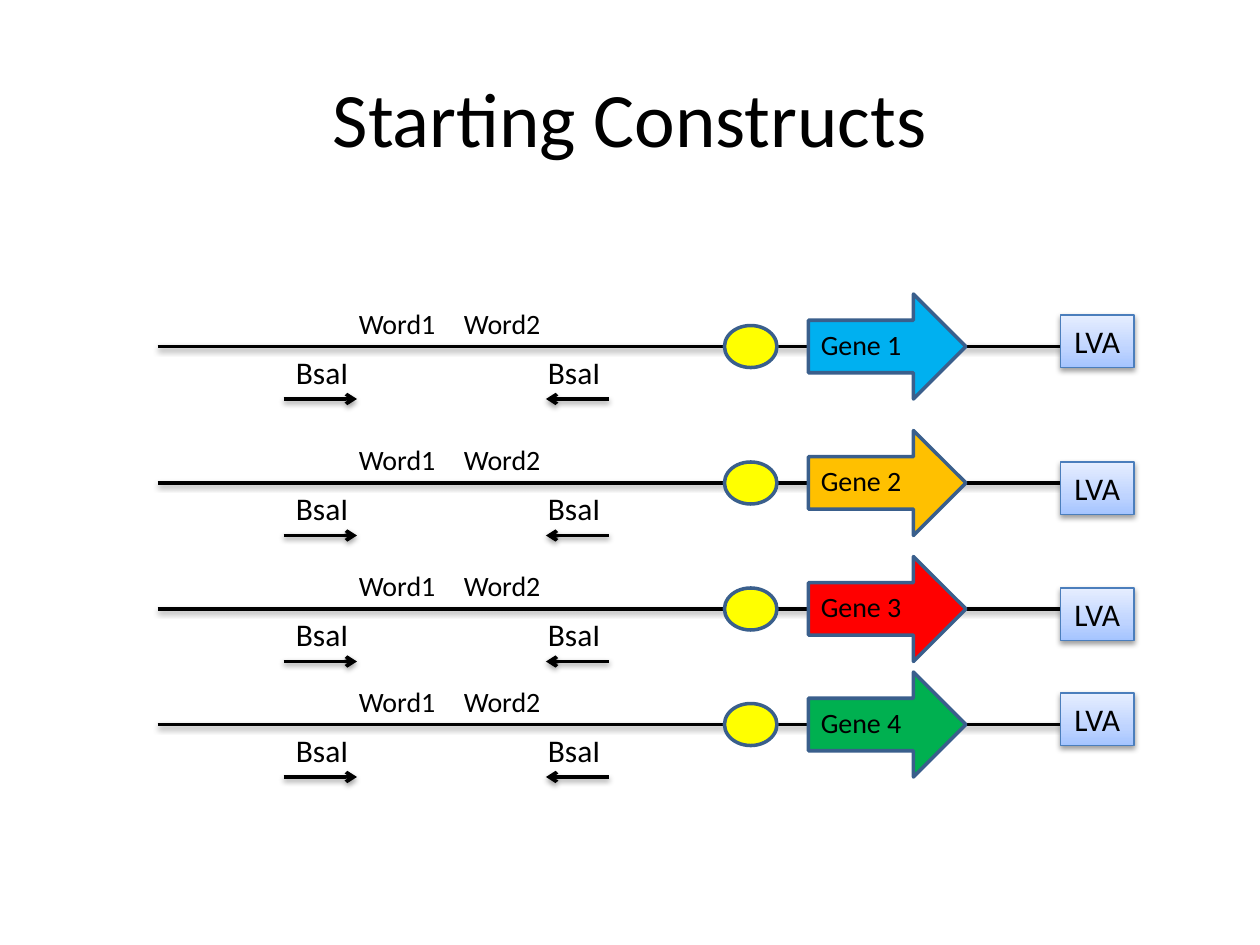
from copy import deepcopy
from dataclasses import dataclass

from lxml.etree import SubElement
from pptx import Presentation
from pptx.dml.color import RGBColor
from pptx.enum.shapes import MSO_CONNECTOR, MSO_SHAPE
from pptx.enum.text import MSO_ANCHOR, MSO_AUTO_SIZE, PP_ALIGN
from pptx.oxml.ns import qn
from pptx.util import Emu, Pt

PX = 7620  # EMU, 120 px to the inch
BLACK = "000000"
OUTLINE = "3A5F8C"
PROMOTER_FILL = "FFFF00"
TAG_OUTLINE = "4B7EBC"
TAG_STOPS = ((0, "A4C4FF"), (0.35, "BFD4FF"), (1, "E6EEFF"))


@dataclass(frozen=True)
class Construct:
    gene: str
    color: str
    axis: int
    tag_top: int


@dataclass(frozen=True)
class Site:
    label_left: int
    start: int
    end: int


CONSTRUCTS = (
    Construct("Gene 1", "00B0F0", 330, 300),
    Construct("Gene 2", "FFC000", 460, 440),
    Construct("Gene 3", "FF0000", 580, 560),
    Construct("Gene 4", "00B050", 690, 660),
)
SITES = (Site(510, 580, 520), Site(270, 270, 340))
WORDS = (("Word2", 430), ("Word1", 330))


def px(*lengths: int) -> list[Emu]:
    return [Emu(length * PX) for length in lengths]


def rgb(color: str) -> RGBColor:
    return RGBColor.from_string(color)


def set_line(shape, color: str, width: float) -> None:
    shape.line.color.rgb = rgb(color)
    shape.line.width = Pt(width)


def set_shadow(shape, cast: bool) -> None:
    """Replace the theme's shadow by a soft one below, or by none; call after set_line."""
    effects = SubElement(shape._element.spPr, qn("a:effectLst"))
    if cast:
        shadow = SubElement(effects, qn("a:outerShdw"), blurRad="40000",
                            dist="20000", dir="5400000", rotWithShape="0")
        color = SubElement(shadow, qn("a:srgbClr"), val=BLACK)
        SubElement(color, qn("a:alpha"), val="38000")


def write(frame, text: str, *, size: int, align=PP_ALIGN.LEFT, anchor=MSO_ANCHOR.TOP) -> None:
    frame.word_wrap = True
    frame.vertical_anchor = anchor
    para = frame.paragraphs[0]
    para.alignment = align
    span = para.add_run()
    span.text = text
    span.font.name = "Calibri"
    span.font.size = Pt(size)
    span.font.color.rgb = rgb(BLACK)


def add_label(shapes, text: str, left: int, top: int, width: int, height: int, size: int) -> None:
    frame = shapes.add_textbox(*px(left, top, width, height)).text_frame
    write(frame, text, size=size)
    frame.auto_size = MSO_AUTO_SIZE.SHAPE_TO_FIT_TEXT


def add_strand(shapes, start: int, end: int, y: int, arrow: bool = False) -> None:
    strand = shapes.add_connector(MSO_CONNECTOR.STRAIGHT, *px(start, y, end, y))
    set_line(strand, BLACK, 2)
    if arrow:
        SubElement(strand.line._get_or_add_ln(), qn("a:tailEnd"), type="arrow")
    set_shadow(strand, True)


def add_part(shapes, kind, left: int, top: int, width: int, height: int, fill: str) -> None:
    part = shapes.add_shape(kind, *px(left, top, width, height))
    part.fill.solid()
    part.fill.fore_color.rgb = rgb(fill)
    set_line(part, OUTLINE, 2)
    set_shadow(part, False)


def add_site(shapes, site: Site, axis: int) -> None:
    """Group a restriction site's name with the arrow under it."""
    group = shapes.add_group_shape().shapes
    add_label(group, "BsaI", site.label_left, axis, 120, 48, 18)
    add_strand(group, site.start, site.end, axis + 50, arrow=True)


def add_tag(shapes, top: int) -> None:
    tag = shapes.add_shape(MSO_SHAPE.RECTANGLE, *px(1010, top, 70, 50))
    tag.fill.gradient()
    tag.fill.gradient_angle = 90
    stop_list = tag._element.spPr.find(".//" + qn("a:gsLst"))
    stop_list.append(deepcopy(stop_list[0]))
    for stop, (position, color) in zip(tag.fill.gradient_stops, TAG_STOPS):
        stop.position = position
        stop.color.rgb = rgb(color)
    set_line(tag, TAG_OUTLINE, 0.75)
    set_shadow(tag, True)
    write(tag.text_frame, "LVA", size=18, align=PP_ALIGN.CENTER, anchor=MSO_ANCHOR.MIDDLE)


def add_construct(shapes, construct: Construct) -> None:
    axis = construct.axis
    add_strand(shapes, 150, 1010, axis)
    add_part(shapes, MSO_SHAPE.RIGHT_ARROW, 770, axis - 50, 150, 100, construct.color)
    add_part(shapes, MSO_SHAPE.OVAL, 690, axis - 20, 50, 40, PROMOTER_FILL)
    for word, left in WORDS:
        add_label(shapes, word, left, axis - 44, 120, 44, 16)
    for site in SITES:
        add_site(shapes, site, axis)
    add_label(shapes, construct.gene, 770, axis - 24, 230, 44, 16)


def main() -> None:
    deck = Presentation()
    deck.slide_width, deck.slide_height = px(1200, 900)
    page = deck.slides.add_slide(deck.slide_layouts[6])
    title = page.shapes.add_textbox(*px(60, 36, 1080, 150))
    write(title.text_frame, "Starting Constructs", size=44,
          align=PP_ALIGN.CENTER, anchor=MSO_ANCHOR.MIDDLE)
    for construct in CONSTRUCTS:
        add_construct(page.shapes, construct)
    for construct in CONSTRUCTS:
        add_tag(page.shapes, construct.tag_top)
    deck.save("out.pptx")


if __name__ == "__main__":
    main()
